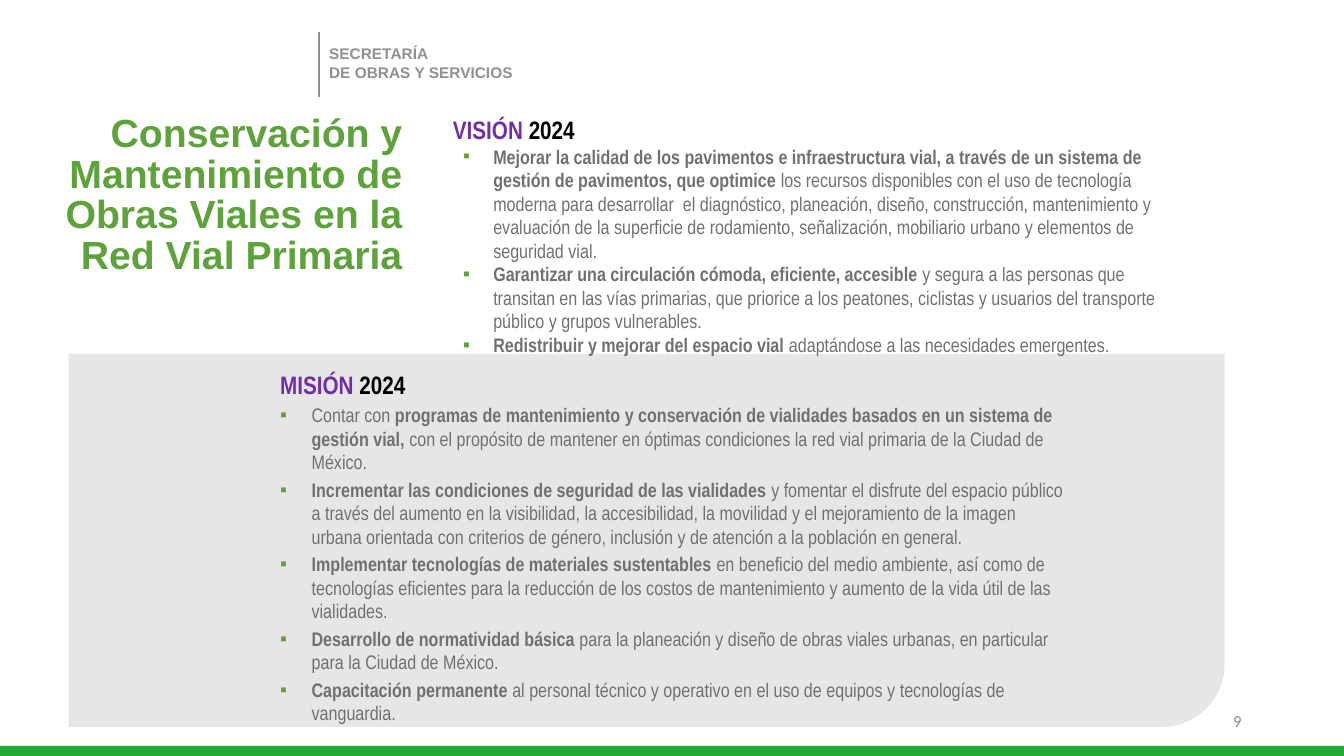
import dataclasses

import lxml.etree
import pptx
import pptx.dml.color
import pptx.enum.shapes
import pptx.enum.text
import pptx.oxml.ns
import pptx.util

Pt = pptx.util.Pt
RGB = pptx.dml.color.RGBColor.from_string
Align = pptx.enum.text.PP_ALIGN
Anchor = pptx.enum.text.MSO_ANCHOR
Shapes = pptx.enum.shapes.MSO_SHAPE
qn = pptx.oxml.ns.qn


@dataclasses.dataclass(frozen=True)
class Theme:
    green: str = "5FA13D"
    band: str = "24A836"
    purple: str = "7030A0"
    black: str = "000000"
    body: str = "707070"
    header: str = "90918F"
    number: str = "8C8C8C"
    panel: str = "E7E6E6"
    font: str = "Arial"
    narrow: str = "Arial Narrow"
    number_font: str = "Calibri"
    title_size: float = 28
    title_line: float = 29
    heading_size: float = 18
    body_size: float = 14
    number_size: float = 12
    header_size: float = 11


@dataclasses.dataclass(frozen=True)
class Box:
    left: float
    top: float
    width: float
    height: float

    def lengths(self):
        return [Pt(value) for value in dataclasses.astuple(self)]


THEME = Theme()
WIDTH, HEIGHT = 960, 540

VISION = [
    [("Mejorar la calidad de los pavimentos e infraestructura vial, a través de un sistema de gestión de pavimentos, que optimice ", True),
     ("los recursos disponibles con el uso de tecnología moderna para desarrollar  el diagnóstico, planeación, diseño, construcción, mantenimiento y evaluación de la superficie de rodamiento, señalización, mobiliario urbano y elementos de seguridad vial.", False)],
    [("Garantizar una circulación cómoda, eficiente, accesible ", True),
     ("y segura a las personas que transitan en las vías primarias, que priorice a los peatones, ciclistas y usuarios del transporte público y grupos vulnerables.", False)],
    [("Redistribuir y mejorar del espacio vial ", True),
     ("adaptándose a las necesidades emergentes.", False)],
]

MISSION = [
    [("Contar con ", False),
     ("programas de mantenimiento y conservación de vialidades basados en un sistema de gestión vial,", True),
     (" con el propósito de mantener en óptimas condiciones la red vial primaria de la Ciudad de México.", False)],
    [("Incrementar las condiciones de seguridad de las vialidades ", True),
     ("y fomentar el disfrute del espacio público a través del aumento en la visibilidad, la accesibilidad, la movilidad y el mejoramiento de la imagen urbana orientada con criterios de género, inclusión y de atención a la población en general.", False)],
    [("Implementar tecnologías de materiales sustentables ", True),
     ("en beneficio del medio ambiente, así como de tecnologías eficientes para la reducción de los costos de mantenimiento y aumento de la vida útil de las vialidades.", False)],
    [("Desarrollo de normatividad básica ", True),
     ("para la planeación y diseño de obras viales urbanas, en particular para la Ciudad de México.", False)],
    [("Capacitación permanente ", True),
     ("al personal técnico y operativo en el uso de equipos y tecnologías de vanguardia.", False)],
]


def style(font, name, size, color, bold=False):
    font.name = name
    font.size = Pt(size)
    font.bold = bold
    font.color.rgb = RGB(color)


def add_span(para, text, name, size, color, bold):
    span = para.add_run()
    span.text = text
    style(span.font, name, size, color, bold)


def add_text_box(page, box):
    frame = page.shapes.add_textbox(*box.lengths()).text_frame
    frame.word_wrap = True
    return frame


def add_block(page, kind, box, color):
    block = page.shapes.add_shape(kind, *box.lengths())
    block.shadow.inherit = False
    block.fill.solid()
    block.fill.fore_color.rgb = RGB(color)
    block.line.fill.background()
    return block


def set_indent(para, margin, hanging):
    properties = para._p.get_or_add_pPr()
    properties.set("marL", str(Pt(margin)))
    properties.set("indent", str(-Pt(hanging)))
    return properties


def add_bullet(para, margin, hanging):
    properties = set_indent(para, margin, hanging)
    color = lxml.etree.SubElement(properties, qn("a:buClr"))
    lxml.etree.SubElement(color, qn("a:srgbClr")).set("val", THEME.green)
    lxml.etree.SubElement(properties, qn("a:buFont")).set("typeface", THEME.font)
    lxml.etree.SubElement(properties, qn("a:buChar")).set("char", "▪")


def add_header(page, box):
    rule = page.shapes.add_connector(
        pptx.enum.shapes.MSO_CONNECTOR.STRAIGHT,
        Pt(box.left), Pt(box.top), Pt(box.left), Pt(box.top + box.height))
    rule.line.color.rgb = RGB(THEME.header)
    rule.line.width = Pt(1)
    lxml.etree.SubElement(rule._element.spPr, qn("a:effectLst"))
    frame = add_text_box(page, Box(box.left, box.top + 5, box.width, box.height))
    frame.text = "SECRETARÍA\nDE OBRAS Y SERVICIOS"
    for para in frame.paragraphs:
        style(para.runs[0].font, THEME.font, THEME.header_size, THEME.header, True)


def add_title(page, box):
    title = page.shapes.title
    title.left, title.top, title.width, title.height = box.lengths()
    frame = title.text_frame
    frame.text = "Conservación y Mantenimiento de Obras Viales en la Red Vial Primaria"
    frame.word_wrap = True
    frame.auto_size = pptx.enum.text.MSO_AUTO_SIZE.NONE
    frame.vertical_anchor = Anchor.TOP
    para = frame.paragraphs[0]
    para.alignment = Align.RIGHT
    para.line_spacing = Pt(THEME.title_line)
    style(para.runs[0].font, THEME.font, THEME.title_size, THEME.green, True)


def add_statement(page, box, heading, items, heading_margin, margin, hanging, gap):
    frame = add_text_box(page, box)
    para = frame.paragraphs[0]
    set_indent(para, heading_margin, 0)
    for text, color in ((heading + " ", THEME.purple), ("2024", THEME.black)):
        add_span(para, text, THEME.narrow, THEME.heading_size, color, True)
    for item in items:
        para = frame.add_paragraph()
        add_bullet(para, margin, hanging)
        para.space_before = Pt(gap)
        for text, bold in item:
            add_span(para, text, THEME.narrow, THEME.body_size, THEME.body, bold)


def add_mission(page, box):
    panel = add_block(page, Shapes.ROUND_1_RECTANGLE, box, THEME.panel)
    panel._element.spPr.find(qn("a:xfrm")).set("flipV", "1")
    text_box = Box(box.left + 108, box.top + 7.2, 613.5, box.height - 7.2)
    add_statement(page, text_box, "MISIÓN", MISSION, 36, 58.5, 22.5, 2.8)


def add_footer(page, box):
    add_block(page, Shapes.RECTANGLE, box, THEME.band)
    frame = add_text_box(page, Box(box.left + 678, box.top - 32.4, 216, 28.8))
    frame.text = "9"
    frame.vertical_anchor = Anchor.MIDDLE
    para = frame.paragraphs[0]
    para.alignment = Align.RIGHT
    style(para.runs[0].font, THEME.number_font, THEME.number_size, THEME.number)


def add_vision_and_mission(deck):
    page = deck.slides.add_slide(deck.slide_layouts[5])
    add_header(page, Box(228, 23, 153.5, 46.5))
    add_title(page, Box(0, 78.5, 294.5, 124.5))
    add_mission(page, Box(49, 252.8, 825.7, 266.4))
    add_statement(page, Box(316.5, 78, 540, 182), "VISIÓN", VISION, 0, 28.8, 21.6, 0)
    add_footer(page, Box(0, 532.8, WIDTH, 7.2))


def main():
    deck = pptx.Presentation()
    deck.slide_width, deck.slide_height = Pt(WIDTH), Pt(HEIGHT)
    add_vision_and_mission(deck)
    deck.save("out.pptx")


if __name__ == "__main__":
    main()
